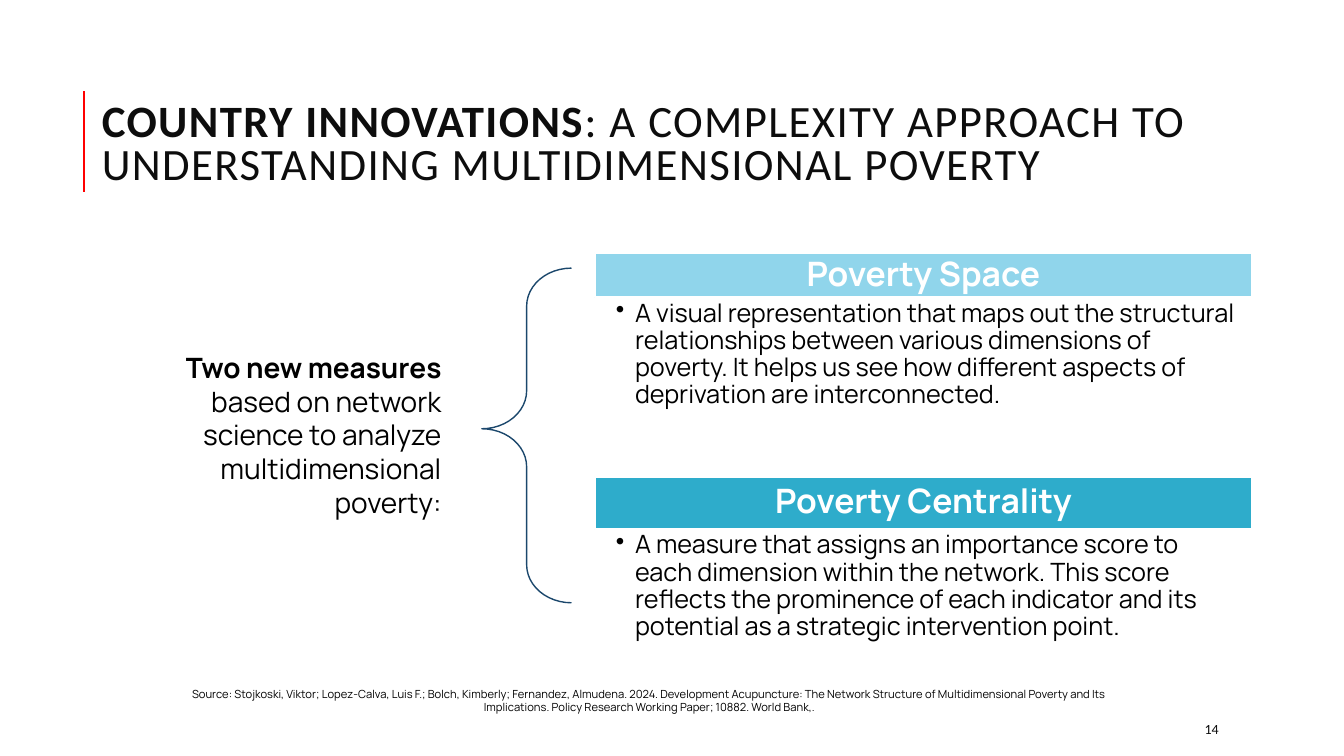
from dataclasses import dataclass
from typing import NamedTuple

from lxml.etree import SubElement
from pptx import Presentation
from pptx.dml.color import RGBColor
from pptx.enum.shapes import MSO_CONNECTOR as Link, MSO_SHAPE as Form
from pptx.enum.text import MSO_ANCHOR as Anchor, PP_ALIGN as Align
from pptx.oxml.ns import qn
from pptx.util import Inches, Pt

WIDE, HIGH = Inches(13.33), Inches(7.5)
COLS, ROWS = 80, 45

BLACK = RGBColor(0x00, 0x00, 0x00)
INK = RGBColor(0x0D, 0x0D, 0x0D)
WHITE = RGBColor(0xFF, 0xFF, 0xFF)
RED = RGBColor(0xFF, 0x00, 0x00)
NAVY = RGBColor(0x1B, 0x47, 0x6C)
SKY = RGBColor(0x90, 0xD5, 0xEB)
TEAL = RGBColor(0x2E, 0xAC, 0xCB)

INSET = (0.6, 0.3, 0.6, 0.3)
HEAD_INSET = (0.6, 0.6, 0.6, 0.6)
BODY_INSET = (1.26, 0.18, 0.84, 0.18)
INDENT = 1.14


class Area(NamedTuple):
    left: float
    top: float
    width: float
    height: float


@dataclass(frozen=True)
class Style:
    size: float
    font: str = "Manrope"
    color: RGBColor = BLACK
    align: Align = Align.LEFT
    anchor: Anchor = Anchor.TOP
    inset: tuple = INSET
    leading: float = 1.0
    track: int = 0
    bullet: bool = False


@dataclass(frozen=True)
class Note:
    area: Area
    style: Style
    text: str
    bold: str = ""


@dataclass(frozen=True)
class Card:
    top: float
    head: float
    body: float
    fill: RGBColor
    title: str
    text: str


TITLE = Style(32, "Calibri", INK, anchor=Anchor.MIDDLE, leading=0.8, track=100)
NUMBER = Style(10, "Calibri", INK, anchor=Anchor.MIDDLE)
LEAD = Style(20, align=Align.RIGHT)
SOURCE = Style(8, align=Align.CENTER)
HEAD = Style(24, color=WHITE, align=Align.CENTER, anchor=Anchor.MIDDLE,
             inset=HEAD_INSET, leading=0.9)
BODY = Style(18, inset=BODY_INSET, leading=0.9, bullet=True)

NOTES = (
    Note(Area(5.46, 2.16, 66.48, 13.08), TITLE,
         ": A COMPLEXITY APPROACH TO UNDERSTANDING MULTIDIMENSIONAL POVERTY",
         "COUNTRY INNOVATIONS"),
    Note(Area(7.32, 20.58, 19.56, 10.68), LEAD,
         "based on network science to analyze multidimensional poverty:",
         "Two new measures "),
    Note(Area(10.5, 40.62, 56.34, 2.22), SOURCE,
         "Source: Stojkoski, Viktor; Lopez-Calva, Luis F.; Bolch, Kimberly; "
         "Fernandez, Almudena. 2024. Development Acupuncture: The Network "
         "Structure of Multidimensional Poverty and Its Implications. Policy "
         "Research Working Paper; 10882. World Bank,."),
    Note(Area(71.1, 42.48, 6.36, 1.8), NUMBER, "14"),
)

CARD_LEFT, CARD_WIDTH = 35.4, 39.12
CARDS = (
    Card(15.06, 2.64, 10.62, SKY, "Poverty Space",
         "A visual representation that maps out the structural relationships "
         "between various dimensions of poverty. It helps us see how different "
         "aspects of deprivation are interconnected."),
    Card(28.38, 3.12, 6.96, TEAL, "Poverty Centrality",
         "A measure that assigns an importance score to each dimension within "
         "the network. This score reflects the prominence of each indicator "
         "and its potential as a strategic intervention point."),
)

BRACE = Area(28.68, 15.96, 5.34, 19.92)
BRACE_CURVE, BRACE_TIP = 0.425, 0.48
RULE_COL, RULE_TOP, RULE_END = 4.98, 5.4, 11.4


def col(count: float) -> int:
    return round(WIDE * count / COLS)


def row(count: float) -> int:
    return round(HIGH * count / ROWS)


def place(area: Area) -> tuple:
    return col(area.left), row(area.top), col(area.width), row(area.height)


def write(shape, style: Style, text: str, bold: str = "") -> None:
    frame = shape.text_frame
    frame.word_wrap = True
    frame.vertical_anchor = style.anchor
    left, top, right, base = style.inset
    frame.margin_left, frame.margin_right = col(left), col(right)
    frame.margin_top, frame.margin_bottom = row(top), row(base)
    para = frame.paragraphs[0]
    para.text = bold or text
    if bold:
        para.add_run().text = text
    if style.bullet:
        props = para._p.get_or_add_pPr()
        props.set("marL", str(col(INDENT)))
        props.set("indent", str(-col(INDENT)))
        SubElement(props, qn("a:buChar"), char="•")
    para.alignment = style.align
    para.line_spacing = style.leading
    for index, run in enumerate(para.runs):
        run.font.size = Pt(style.size)
        run.font.name = style.font
        run.font.color.rgb = style.color
        run.font.bold = bool(bold) and index == 0
        if style.track:
            run._r.get_or_add_rPr().set("spc", str(style.track))


def add_note(slide, note: Note) -> None:
    box = slide.shapes.add_textbox(*place(note.area))
    write(box, note.style, note.text, note.bold)


def add_card(slide, card: Card) -> None:
    area = Area(CARD_LEFT, card.top, CARD_WIDTH, card.head)
    bar = slide.shapes.add_shape(Form.RECTANGLE, *place(area))
    bar.shadow.inherit = False
    bar.fill.solid()
    bar.fill.fore_color.rgb = card.fill
    bar.line.color.rgb = WHITE
    bar.line.width = Pt(1.25)
    write(bar, HEAD, "", card.title)
    below = Area(CARD_LEFT, card.top + card.head, CARD_WIDTH, card.body)
    add_note(slide, Note(below, BODY, card.text))


def add_brace(slide) -> None:
    brace = slide.shapes.add_shape(Form.LEFT_BRACE, *place(BRACE))
    brace.shadow.inherit = False
    brace.adjustments[0] = BRACE_CURVE
    brace.adjustments[1] = BRACE_TIP
    brace.fill.background()
    brace.line.color.rgb = NAVY
    brace.line.width = Pt(1)


def add_rule(slide) -> None:
    rule = slide.shapes.add_connector(
        Link.STRAIGHT, col(RULE_COL), row(RULE_END), col(RULE_COL), row(RULE_TOP))
    rule.line.color.rgb = RED
    rule.line.width = Pt(1.5)
    SubElement(rule._element.spPr, qn("a:effectLst"))


def main() -> None:
    deck = Presentation()
    deck.slide_width, deck.slide_height = WIDE, HIGH
    slide = deck.slides.add_slide(deck.slide_layouts[6])
    add_rule(slide)
    for note in NOTES:
        add_note(slide, note)
    for card in CARDS:
        add_card(slide, card)
    add_brace(slide)
    deck.save("out.pptx")


if __name__ == "__main__":
    main()
